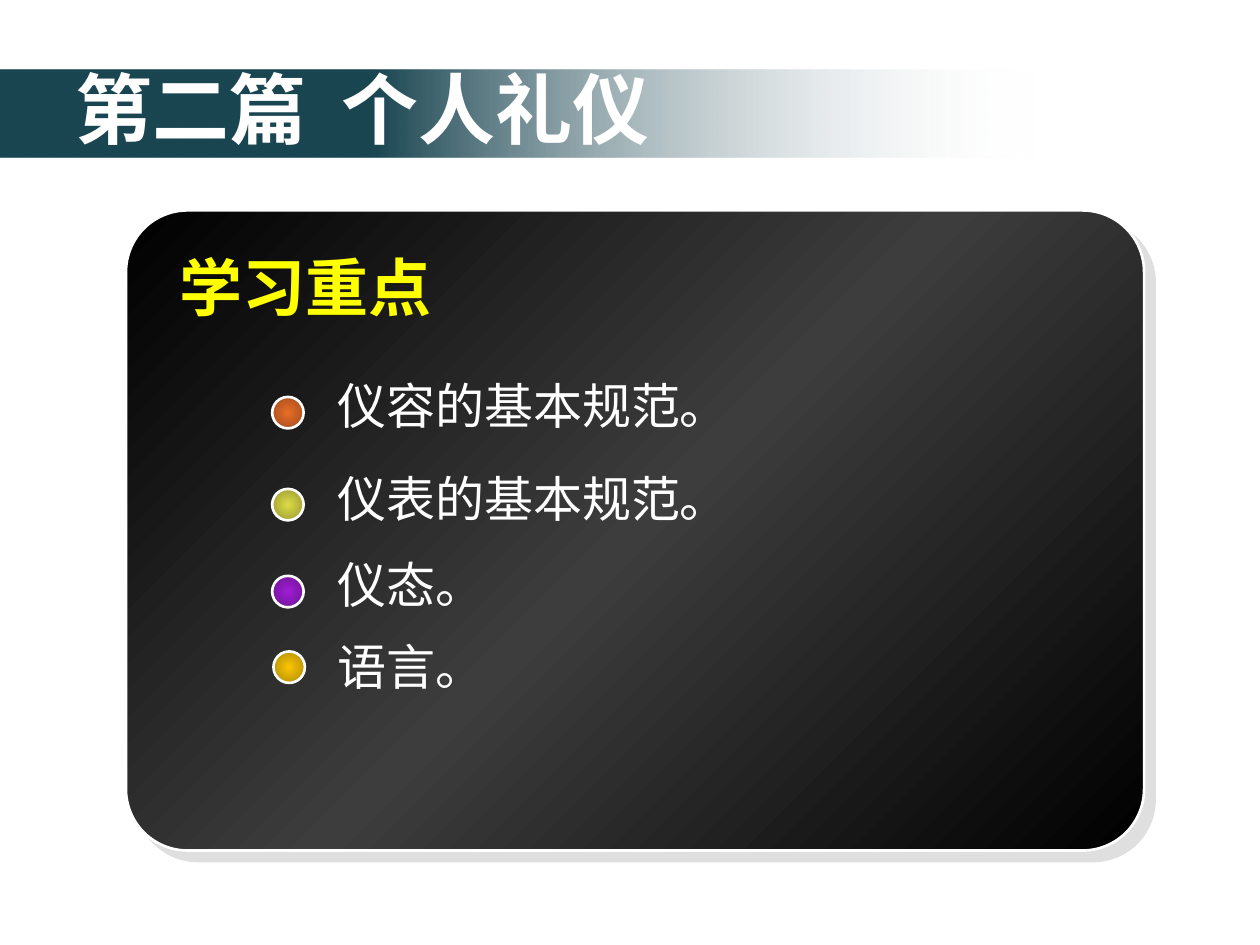
from dataclasses import dataclass
from lxml.etree import SubElement
from pptx import Presentation
from pptx.dml.color import RGBColor
from pptx.enum.shapes import MSO_SHAPE
from pptx.enum.text import MSO_ANCHOR, MSO_AUTO_SIZE, PP_ALIGN
from pptx.oxml import parse_xml
from pptx.oxml.ns import nsdecls, qn
from pptx.util import Inches, Pt


@dataclass(frozen=True)
class Theme:
    white: str = "FFFFFF"
    teal: str = "1A4652"
    mist: str = "F8F8F8"
    black: str = "000000"
    gray: str = "3D3D3D"
    shade: str = "C0C0C0"
    dim: str = "808080"
    yellow: str = "FFFF00"
    sans: str = "Arial"
    cjk: str = "Noto Sans CJK SC"
    title: int = 44
    head: int = 36
    item: int = 28
    edge: float = 1.5


THEME = Theme()
ROWS = [
    ("仪容的基本规范。", 2.16, 3.15, 2.93, 3.31, "E96E29", "9B491B"),
    ("仪表的基本规范。", 2.16, 3.88, 3.67, 3.31, "DCDC48", "939330"),
    ("仪态。", 2.16, 4.57, 4.35, 1.37, "A01DD5", "6B138E"),
    ("语言。", 2.17, 5.17, 5.0, 1.37, "FCC704", "A88503"),
]


def span(*box):
    return [Inches(side) for side in box]


def blend(shape, stops, angle=None):
    marks = "".join(
        f'<a:gs pos="{pos * 1000}"><a:srgbClr val="{tone}">'
        f'<a:alpha val="{alpha * 1000}"/></a:srgbClr></a:gs>'
        for pos, tone, alpha in stops
    )
    if angle is None:
        way = ('<a:path path="circle"><a:fillToRect l="50000" t="50000" '
               'r="50000" b="50000"/></a:path>')
    else:
        way = f'<a:lin ang="{angle * 60000}" scaled="0"/>'
    shape.fill.background()
    props = shape._element.spPr
    props.replace(
        props.find(qn("a:noFill")),
        parse_xml(f'<a:gradFill {nsdecls("a")} rotWithShape="1">'
                  f'<a:gsLst>{marks}</a:gsLst>{way}</a:gradFill>'),
    )


def cast(parent, tone, alpha, gap):
    shadow = SubElement(parent, qn("a:outerShdw"), blurRad="0",
                        dist=str(Pt(gap)), dir="2700000", algn="ctr",
                        rotWithShape="0")
    color = SubElement(shadow, qn("a:srgbClr"), val=tone)
    SubElement(color, qn("a:alpha"), val=str(alpha * 1000))


def form(slide, kind, box, stops, angle=None, edge=True):
    shape = slide.shapes.add_shape(kind, *span(*box))
    shape.shadow.inherit = False
    blend(shape, stops, angle)
    if edge:
        shape.line.color.rgb = RGBColor.from_string(THEME.white)
        shape.line.width = Pt(THEME.edge)
    else:
        shape.line.fill.background()
    return shape


def style(para, size, tone, face, bold=False):
    para.alignment = PP_ALIGN.LEFT
    font = para.font
    font.size, font.name, font.bold = Pt(size), face, bold
    font.color.rgb = RGBColor.from_string(tone)


def label(slide, box, text, size, tone, bold=False, wrap=False):
    frame = slide.shapes.add_textbox(*span(*box)).text_frame
    frame.word_wrap = wrap
    frame.auto_size = MSO_AUTO_SIZE.SHAPE_TO_FIT_TEXT
    para = frame.paragraphs[0]
    para.text = text
    style(para, size, tone, THEME.sans, bold)
    return para


def banner(slide, left, top):
    form(slide, MSO_SHAPE.RECTANGLE, (left, top, 8.22, 0.7),
         [(0, THEME.mist, 0), (64, THEME.teal, 100), (100, THEME.teal, 100)],
         180, edge=False)
    title = slide.shapes.title
    slide.shapes._spTree.append(title._element)
    title.left, title.top, title.width, title.height = span(
        left + 0.5, top - 0.11, 6.17, 1.01)
    frame = title.text_frame
    frame.auto_size = MSO_AUTO_SIZE.NONE
    frame.vertical_anchor = MSO_ANCHOR.TOP
    para = frame.paragraphs[0]
    for text in ("第二篇", " ", "个人礼仪"):
        run = para.add_run()
        run.text = text
        if text == " ":
            run._r.get_or_add_rPr().set("spc", "980")
    style(para, THEME.title, THEME.white, THEME.cjk, True)


def entry(slide, text, left, top, line, width, core, rim):
    form(slide, MSO_SHAPE.OVAL, (left, top, 0.25, 0.25),
         [(0, core, 100), (100, rim, 100)])
    label(slide, (2.58, line, width, 0.57), text, THEME.item, THEME.white)


def card(slide, left, top, width, height):
    panel = form(slide, MSO_SHAPE.ROUNDED_RECTANGLE, (left, top, width, height),
                 [(0, THEME.black, 100), (50, THEME.gray, 100),
                  (100, THEME.black, 100)], 45)
    panel.adjustments[0] = 0.096
    cast(panel._element.spPr.find(qn("a:effectLst")), THEME.shade, 50, 8.5)
    para = label(slide, (left + 0.33, top + 0.25, 2.25, 0.7), "学习重点",
                 THEME.head, THEME.yellow, bold=True, wrap=True)
    props = para.runs[0]._r.get_or_add_rPr()
    cast(SubElement(props, qn("a:effectLst")), THEME.dim, 100, 2)
    for row in ROWS:
        entry(slide, *row)


def main():
    deck = Presentation()
    deck.slide_width, deck.slide_height = span(10, 7.5)
    slide = deck.slides.add_slide(deck.slide_layouts[5])
    banner(slide, 0, 0.55)
    card(slide, 1, 1.67, 8.08, 5.08)
    deck.save("out.pptx")


if __name__ == "__main__":
    main()
